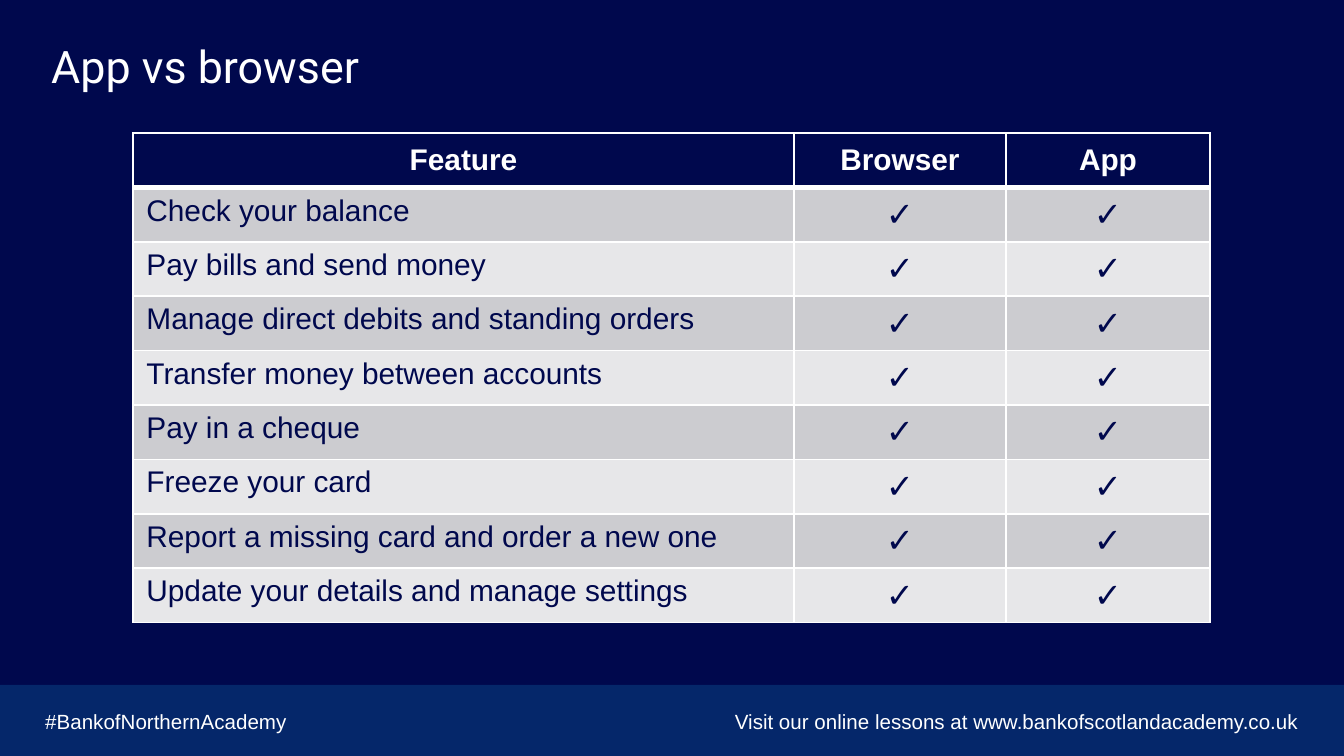
"""Build the slide comparing app and browser banking features."""
from lxml.etree import SubElement
from pptx import Presentation
from pptx.dml.color import RGBColor
from pptx.enum.shapes import MSO_SHAPE
from pptx.enum.text import MSO_ANCHOR as ANCHOR, PP_ALIGN as ALIGN
from pptx.oxml.ns import qn
from pptx.util import Pt

COLORS = {"navy": "00084D", "footer": "05276A", "white": "FFFFFF",
          "odd": "CCCCD0", "even": "E7E7E9"}
TITLE = "App vs browser"
HASHTAG = "#BankofNorthernAcademy"
INVITE = "Visit our online lessons at www.bankofscotlandacademy.co.uk"
HEADER = ["Feature", "Browser", "App"]
FEATURES = [
    "Check your balance",
    "Pay bills and send money",
    "Manage direct debits and standing orders",
    "Transfer money between accounts",
    "Pay in a cheque",
    "Freeze your card",
    "Report a missing card and order a new one",
    "Update your details and manage settings",
]
ROWS = [HEADER] + [[feature, "✓", "✓"] for feature in FEATURES]
COL_WIDTHS = [661, 212, 204]
TABLE_LEFT, TABLE_TOP, TABLE_HEIGHT = 133, 133, 490
WIDTH, HEIGHT, FOOTER_TOP = 1344, 756, 685
SCALE = 9144000 / WIDTH


def px(n):
    return round(n * SCALE)


def rgb(name):
    return RGBColor.from_string(COLORS[name])


def style(p, size, color, font="Arial", bold=False, align=ALIGN.LEFT):
    p.alignment = align
    for r in p.runs:
        r.font.size, r.font.name, r.font.bold = Pt(size), font, bold
        r.font.color.rgb = rgb(color)


def add_text(s, box, text, size, font="Arial", align=ALIGN.LEFT):
    tf = s.shapes.add_textbox(*map(px, box)).text_frame
    tf.word_wrap = True
    tf.text = text
    style(tf.paragraphs[0], size, "white", font, align=align)
    return tf.paragraphs[0]


def add_borders(cell, top, bottom):
    tc_pr = cell._tc.get_or_add_tcPr()
    for side, width in (("L", 1), ("R", 1), ("T", top), ("B", bottom)):
        ln = SubElement(tc_pr, qn(f"a:ln{side}"), w=str(Pt(width)))
        fill = SubElement(ln, qn("a:solidFill"))
        SubElement(fill, qn("a:srgbClr"), val=COLORS["white"])


def style_cell(cell, text, row, col):
    head = row == 0
    add_borders(cell, 3 if row == 1 else 1, 3 if head else 1)
    cell.fill.solid()
    cell.fill.fore_color.rgb = rgb("navy" if head else "odd" if row % 2 else "even")
    cell.text = text
    centred = head or col > 0
    cell.vertical_anchor = ANCHOR.MIDDLE if centred else ANCHOR.TOP
    style(cell.text_frame.paragraphs[0], 18 if col and not head else 16,
          "white" if head else "navy", bold=head,
          align=ALIGN.CENTER if centred else ALIGN.LEFT)


def add_feature_table(s):
    box = TABLE_LEFT, TABLE_TOP, sum(COL_WIDTHS), TABLE_HEIGHT
    table = s.shapes.add_table(len(ROWS), len(HEADER), *map(px, box)).table
    for column, width in zip(table.columns, COL_WIDTHS):
        column.width = px(width)
    for i, values in enumerate(ROWS):
        table.rows[i].height = px(TABLE_HEIGHT / len(ROWS))
        for j, text in enumerate(values):
            style_cell(table.cell(i, j), text, i, j)


def main():
    prs = Presentation()
    prs.slide_width, prs.slide_height = px(WIDTH), px(HEIGHT)
    s = prs.slides.add_slide(prs.slide_layouts[6])
    s.background.fill.solid()
    s.background.fill.fore_color.rgb = rgb("navy")

    box = 0, FOOTER_TOP, WIDTH, HEIGHT - FOOTER_TOP
    footer = s.shapes.add_shape(MSO_SHAPE.RECTANGLE, *map(px, box))
    footer.shadow.inherit = False
    footer.fill.solid()
    footer.fill.fore_color.rgb = rgb("footer")
    footer.line.fill.background()

    add_text(s, (32, 702, 280, 39), HASHTAG, 11)
    add_text(s, (672, 702, 640, 39), INVITE, 11, align=ALIGN.RIGHT)
    add_text(s, (38, 38, 609, 63), TITLE, 24, "Roboto").line_spacing = 0.9
    add_feature_table(s)
    prs.save("out.pptx")


if __name__ == "__main__":
    main()
